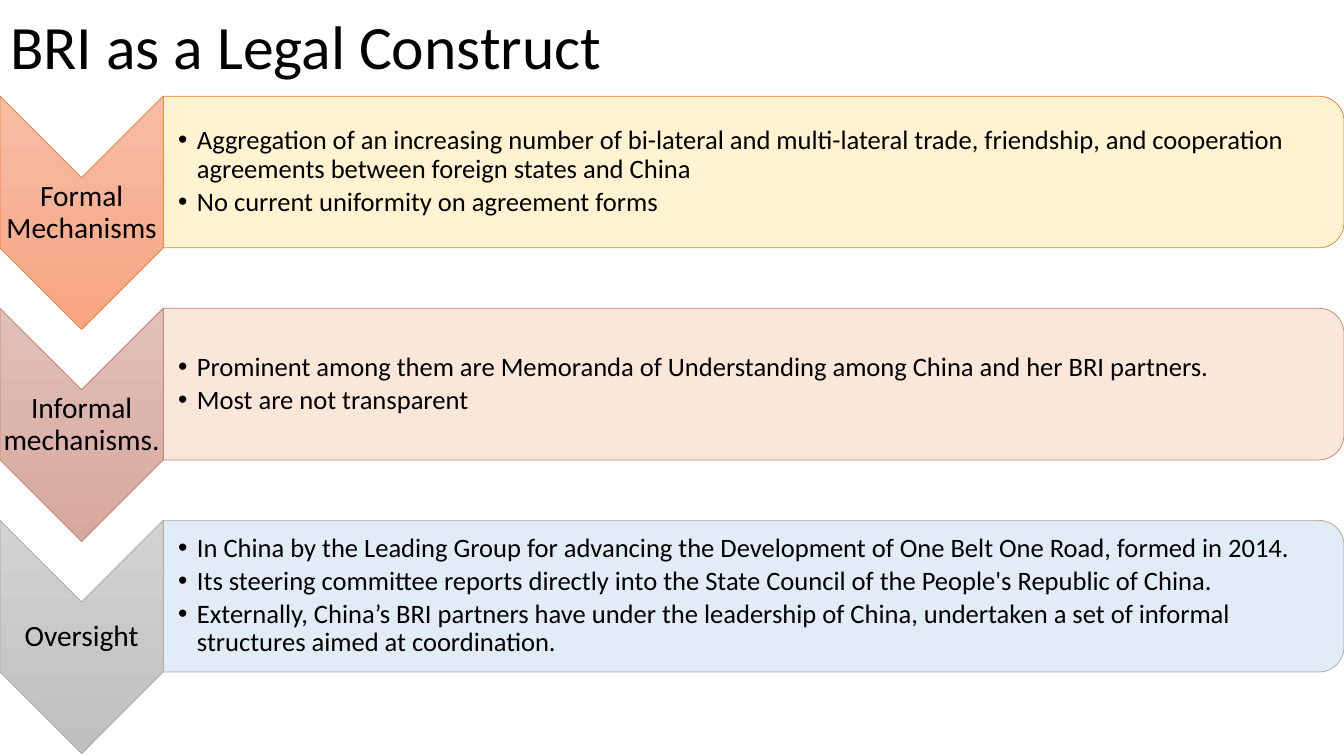
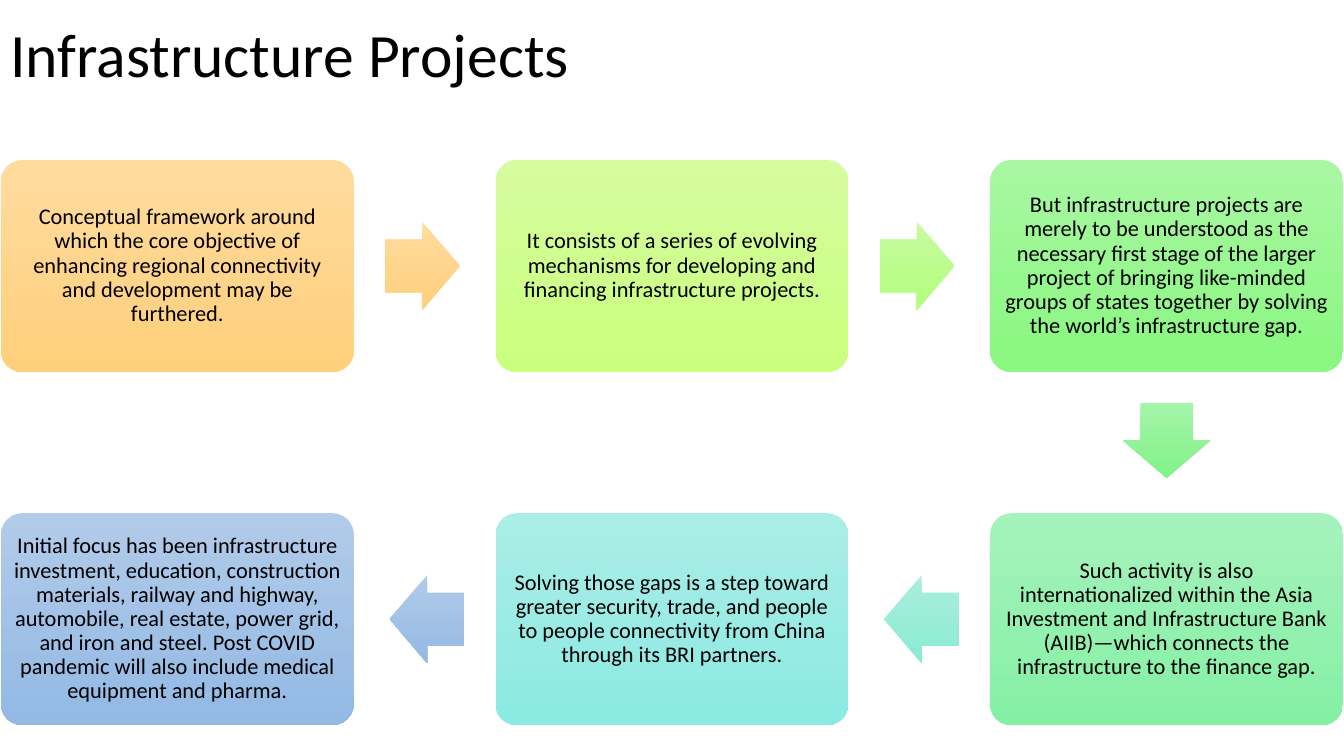
import pptx
import pptx.util
import pptx.dml.color
import pptx.enum.shapes
import pptx.enum.text
import pptx.oxml
import pptx.oxml.ns

Pt = pptx.util.Pt
SHAPE = pptx.enum.shapes.MSO_SHAPE
ALIGN = pptx.enum.text.PP_ALIGN
FONT = "Calibri"
WIDTH, HEIGHT = 960, 540

COLORS = {
    "text": "000000",
    "orange": "ED7D31", "cream": "FFF2CC", "orange_top": "F7BDA5", "orange_end": "F8A582",
    "rust": "C48170", "peach": "FBE5D6", "rust_top": "E0C0B9", "rust_end": "D7A89E",
    "gray": "A5A5A5", "ice": "DEEBF7", "gray_top": "D2D2D2", "gray_end": "C0C0C0",
    "amber_top": "FFDB9E", "amber_end": "FFD07C",
    "lime_top": "D5FC9F", "lime_end": "CAFF7D",
    "lime_arrow_top": "C6FBA0", "lime_arrow_end": "B4FD7D",
    "green_top": "A9F7A2", "green_end": "89F780",
    "green_arrow_top": "A4F4A9", "green_arrow_end": "82F388",
    "mint_top": "A6F2BC", "mint_end": "84F0A4",
    "mint_arrow_top": "AAEEDD", "mint_arrow_end": "89EBD3",
    "aqua_top": "ABEDE7", "aqua_end": "8BEAE2",
    "blue_top": "B1CBE9", "blue_end": "93B9E4",
}

LEGAL_TITLE = "BRI as a Legal Construct"
# label, accent color, band color, bullets
LEGAL_ROWS = [
    ("Formal Mechanisms", "orange", "cream", [
        "Aggregation of an increasing number of bi-lateral and multi-lateral trade, "
        "friendship, and cooperation agreements between foreign states and China",
        "No current uniformity on agreement forms"]),
    ("Informal mechanisms.", "rust", "peach", [
        "Prominent among them are Memoranda of Understanding among China and her BRI partners.",
        "Most are not transparent"]),
    ("Oversight", "gray", "ice", [
        "In China by the Leading Group for advancing the Development of One Belt One Road, "
        "formed in 2014.",
        "Its steering committee reports directly into the State Council of the "
        "People's Republic of China.",
        "Externally, China’s BRI partners have under the leadership of China, undertaken "
        "a set of informal structures aimed at coordination."]),
]

PROJECTS_TITLE = "Infrastructure Projects"
# column, row, box color, color of the arrow to the next step, text
PROJECT_STEPS = [
    (0, 0, "amber", "amber",
     "Conceptual framework around which the core objective of enhancing regional "
     "connectivity and development may be furthered."),
    (1, 0, "lime", "lime_arrow",
     "It consists of a series of evolving mechanisms for developing and financing "
     "infrastructure projects."),
    (2, 0, "green", "green_arrow",
     "But infrastructure projects are merely to be understood as the necessary first "
     "stage of the larger project of bringing like-minded groups of states together "
     "by solving the world’s infrastructure gap."),
    (2, 1, "mint", "mint_arrow",
     "Such activity is also internationalized within the Asia Investment and "
     "Infrastructure Bank (AIIB)—which connects the infrastructure to the finance gap."),
    (1, 1, "aqua", "blue",
     "Solving those gaps is a step toward greater security, trade, and people to people "
     "connectivity from China through its BRI partners."),
    (0, 1, "blue", None,
     "Initial focus has been infrastructure investment, education, construction "
     "materials, railway and highway, automobile, real estate, power grid, and iron and "
     "steel. Post COVID pandemic will also include medical equipment and pharma."),
]


def rgb(name):
    return pptx.dml.color.RGBColor.from_string(COLORS[name])


def place(sp, left, top, width, height):
    sp.left, sp.top, sp.width, sp.height = Pt(left), Pt(top), Pt(width), Pt(height)


def add_bullet(p, indent):
    pPr = p._p.get_or_add_pPr()
    pPr.set("marL", str(Pt(indent)))
    pPr.set("indent", str(-Pt(indent)))
    for tag, attr, value in (("a:buFont", "typeface", "Arial"), ("a:buChar", "char", "•")):
        pptx.oxml.ns.qn(tag)
        bullet = pptx.oxml.parse_xml(
            f'<{tag} {pptx.oxml.ns.nsdecls("a")} {attr}="{value}"/>')
        pPr.append(bullet)


def set_text(sp, paragraphs, size, align=ALIGN.LEFT, margins=(1, 1, 1, 1), after=0, indent=0):
    """Fill a shape with one paragraph per string; an indent makes them bullets."""
    tf = sp.text_frame
    tf.word_wrap = True
    tf.auto_size = pptx.enum.text.MSO_AUTO_SIZE.NONE
    tf.vertical_anchor = pptx.enum.text.MSO_ANCHOR.MIDDLE
    tf.margin_left, tf.margin_top, tf.margin_right, tf.margin_bottom = map(Pt, margins)
    for i, text in enumerate(paragraphs):
        p = tf.add_paragraph() if i else tf.paragraphs[0]
        p.alignment, p.line_spacing = align, 0.9
        p.space_before, p.space_after = Pt(0), Pt(after)
        if indent:
            add_bullet(p, indent)
        r = p.add_run()
        r.text = text
        r.font.name, r.font.size, r.font.bold = FONT, Pt(size), False
        r.font.color.rgb = rgb("text")


def add_block(s, kind, box, rotation=0, line=None):
    """Add a shape whose box is given as it appears after rotation."""
    left, top, width, height = box
    sp = s.shapes.add_shape(kind, 0, 0, 0, 0)
    if rotation % 180:
        left, top = left + (width - height) / 2, top + (height - width) / 2
        width, height = height, width
    place(sp, left, top, width, height)
    sp.rotation = rotation
    sp.shadow.inherit = False
    if line:
        sp.line.color.rgb, sp.line.width = rgb(line), Pt(0.5)
    else:
        sp.line.fill.background()
    return sp


def fill_gradient(sp, color):
    """Shade from top to bottom of the slide, whatever the rotation."""
    sp.fill.gradient()
    sp.fill.gradient_angle = (270 + sp.rotation) % 360
    for stop, end in zip(sp.fill.gradient_stops, ("top", "end")):
        stop.color.rgb = rgb(f"{color}_{end}")


def fill_translucent(sp, color, percent):
    sp.fill.solid()
    sp.fill.fore_color.rgb = rgb(color)
    clr = sp.element.spPr.find(".//" + pptx.oxml.ns.qn("a:srgbClr"))
    clr.append(pptx.oxml.parse_xml(
        f'<a:alpha {pptx.oxml.ns.nsdecls("a")} val="{percent * 1000}"/>'))


def add_slide(prs, layout, title, box):
    s = prs.slides.add_slide(prs.slide_layouts.get_by_name(layout))
    place(s.shapes.title, *box)
    set_text(s.shapes.title, [title], 44, margins=(7.2, 3.6, 7.2, 3.6))
    return s


def build_legal(prs):
    s = add_slide(prs, "Comparison", LEGAL_TITLE, (0, 1.4, 480, 67.7))
    first, step = 68.7, 151.5
    chevron_w, chevron_h, band_h = 116.6, 166.6, 108.3
    point = chevron_w / 2
    bodies = [ph for ph in s.placeholders if ph.placeholder_format.idx in range(1, 10)]
    for spare in bodies[len(LEGAL_ROWS):]:
        spare.element.getparent().remove(spare.element)
    for i, (label, accent, band_color, bullets) in enumerate(LEGAL_ROWS):
        top = first + i * step
        chevron = add_block(s, SHAPE.CHEVRON, (0, top, chevron_w, chevron_h), 90, accent)
        fill_gradient(chevron, accent)
        tb = s.shapes.add_textbox(0, Pt(top + point), Pt(chevron_w), Pt(chevron_h - 2 * point))
        set_text(tb, [label], 21, align=ALIGN.CENTER)

        band = add_block(s, SHAPE.ROUND_2_SAME_RECTANGLE,
                         (chevron_w, top, WIDTH - chevron_w, band_h), 90, accent)
        fill_translucent(band, band_color, 90)
        body = bodies[i]
        body.element.addprevious(band.element)
        place(body, chevron_w, top + 5.3, 838, band_h - 10.6)
        set_text(body, bullets, 19, margins=(10.6, 1, 1, 1), after=2.9, indent=13.5)


def build_projects(prs):
    s = add_slide(prs, "Title Only", PROJECTS_TITLE, (0, 0, 427, 82))
    left, top, box_w, box_h = 0.7, 114.3, 252, 151.3
    pitch_x, pitch_y = 353.3, 252.3
    arrow_len, arrow_w, gap = 53.4, 62.6, 22.3
    rotations = {(1, 0): 0, (0, 1): 90, (-1, 0): 180}
    for i, (col, row, color, arrow_color, text) in enumerate(PROJECT_STEPS):
        x, y = left + col * pitch_x, top + row * pitch_y
        box = add_block(s, SHAPE.ROUNDED_RECTANGLE, (x, y, box_w, box_h))
        box.adjustments[0] = 0.1
        fill_gradient(box, color)
        set_text(box, [text], 16, align=ALIGN.CENTER, margins=(4.8,) * 4)
        if not arrow_color:
            continue
        dx, dy = PROJECT_STEPS[i + 1][0] - col, PROJECT_STEPS[i + 1][1] - row
        reach = gap + arrow_len / 2
        cx = x + box_w / 2 + dx * (box_w / 2 + reach)
        cy = y + box_h / 2 + dy * (box_h / 2 + reach)
        w, h = (arrow_len, arrow_w) if dx else (arrow_w, arrow_len)
        arrow = add_block(s, SHAPE.RIGHT_ARROW, (cx - w / 2, cy - h / 2, w, h),
                          rotations[dx, dy])
        arrow.adjustments[0], arrow.adjustments[1] = 0.6, 0.5
        fill_gradient(arrow, arrow_color)


def main():
    prs = pptx.Presentation()
    prs.slide_width, prs.slide_height = Pt(WIDTH), Pt(HEIGHT)
    build_legal(prs)
    build_projects(prs)
    prs.save("out.pptx")


if __name__ == "__main__":
    main()
